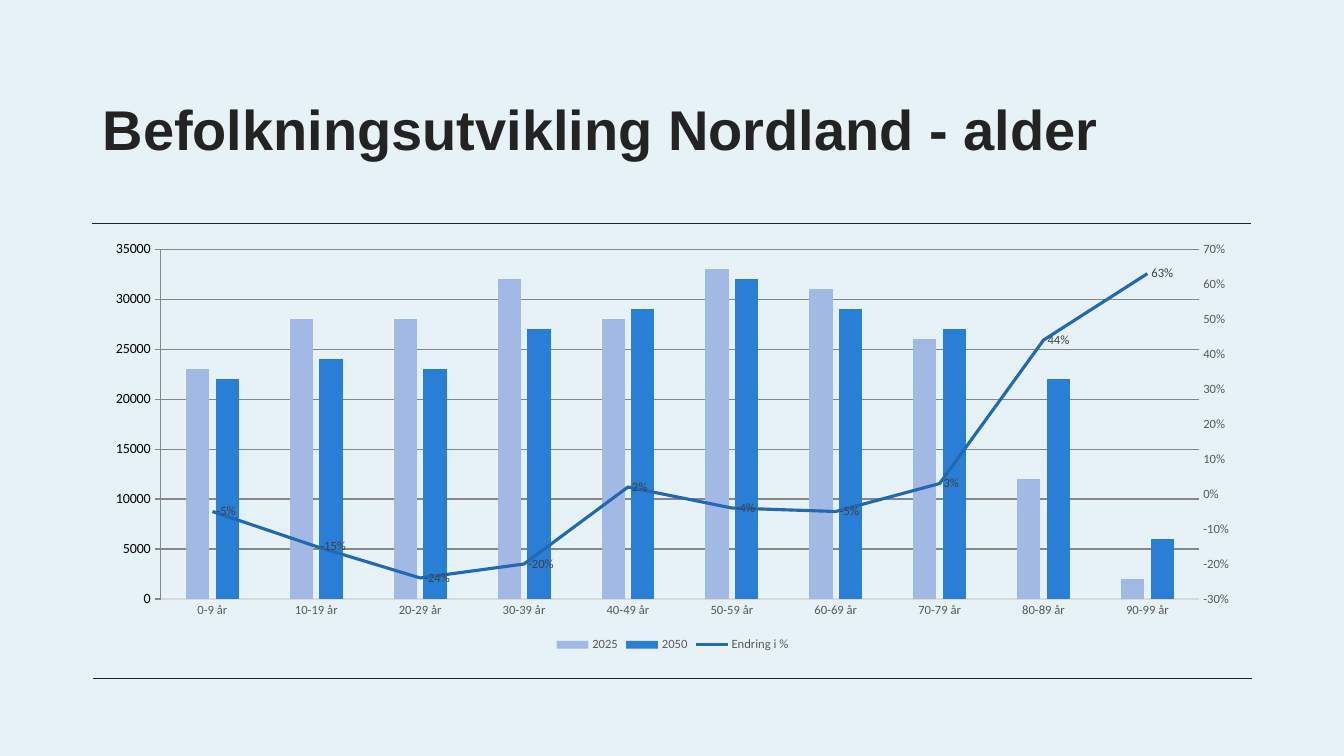
from dataclasses import dataclass

from pptx import Presentation
from pptx.chart.axis import ValueAxis
from pptx.chart.data import CategoryChartData
from pptx.dml.color import RGBColor
from pptx.enum.chart import XL_CHART_TYPE, XL_LABEL_POSITION, XL_LEGEND_POSITION
from pptx.enum.chart import XL_MARKER_STYLE, XL_TICK_MARK
from pptx.enum.shapes import MSO_CONNECTOR
from pptx.enum.text import MSO_ANCHOR
from pptx.oxml import parse_xml
from pptx.oxml.ns import nsdecls, qn
from pptx.util import Emu, Pt

EMU_PER_PX = 9144
INK = "242323"
GRAY = "595959"
GRID = "D9D9D9"


@dataclass(frozen=True)
class Rule:
    left: int
    top: int
    width: int


@dataclass(frozen=True)
class PopulationSeries:
    name: str
    values: tuple
    color: str
    number_format: str = "0"


RULES = (Rule(92, 673, 1150), Rule(91, 222, 1150))
AGE_GROUPS = [f"{start}-{start + 9} år" for start in range(0, 100, 10)]
POPULATIONS = (
    PopulationSeries(
        "2025",
        (23000, 28000, 28000, 32000, 28000, 33000, 31000, 26000, 12000, 2000),
        "A3B9E5",
    ),
    PopulationSeries(
        "2050",
        (22000, 24000, 23000, 27000, 29000, 32000, 29000, 27000, 22000, 6000),
        "297FD5",
    ),
)
CHANGE = PopulationSeries(
    "Endring i %",
    (-0.05, -0.15, -0.24, -0.2, 0.02, -0.04, -0.05, 0.03, 0.44, 0.63),
    "2269B1",
    "0%",
)


def px(length: int) -> Emu:
    return Emu(length * EMU_PER_PX)


def rgb(color: str) -> RGBColor:
    return RGBColor.from_string(color)


def set_font(font, name: str, size: int, color: str, bold: bool = False) -> None:
    font.name = name
    font.size = Pt(size)
    font.bold = bold
    font.color.rgb = rgb(color)


def set_line(line, color: str, width: float) -> None:
    line.color.rgb = rgb(color)
    line.width = Pt(width)


def add_rule(slide, rule: Rule) -> None:
    connector = slide.shapes.add_connector(
        MSO_CONNECTOR.STRAIGHT,
        px(rule.left), px(rule.top), px(rule.left + rule.width), px(rule.top),
    )
    set_line(connector.line, INK, 0.5)
    properties = connector._element.spPr
    properties.append(parse_xml(f"<a:effectLst {nsdecls('a')}/>"))


def add_title(slide, text: str) -> None:
    title = slide.shapes.add_textbox(px(92), px(40), px(1150), px(182))
    frame = title.text_frame
    frame.word_wrap = True
    frame.vertical_anchor = MSO_ANCHOR.MIDDLE
    paragraph = frame.paragraphs[0]
    paragraph.text = text
    paragraph.line_spacing = 0.9
    set_font(paragraph.font, "Arial", 40, INK, bold=True)


def style_axis(axis) -> None:
    axis.major_tick_mark = XL_TICK_MARK.NONE
    axis.minor_tick_mark = XL_TICK_MARK.NONE
    set_font(axis.tick_labels.font, "Calibri", 9, GRAY)


def style_value_axis(
    axis, low: float, high: float, step: float, number_format: str
) -> None:
    style_axis(axis)
    axis.minimum_scale = low
    axis.maximum_scale = high
    axis.major_unit = step
    axis.format.line.fill.background()
    axis.tick_labels.number_format = number_format
    axis.tick_labels.number_format_is_linked = False


def move_last_series_to_right_axis(chart) -> ValueAxis:
    bars = chart._chartSpace.find(".//" + qn("c:barChart"))
    series = bars.findall(qn("c:ser"))[-1]
    for bar_setting in series.findall(qn("c:invertIfNegative")):
        series.remove(bar_setting)
    lines = parse_xml(
        f'<c:lineChart {nsdecls("c")}><c:grouping val="standard"/>'
        '<c:varyColors val="0"/><c:marker val="1"/>'
        '<c:axId val="5001"/><c:axId val="5002"/></c:lineChart>'
    )
    lines.insert(2, series)
    bars.addnext(lines)
    category_axis = parse_xml(
        f'<c:catAx {nsdecls("c")}><c:axId val="5001"/>'
        '<c:scaling><c:orientation val="minMax"/></c:scaling>'
        '<c:delete val="1"/><c:axPos val="b"/>'
        '<c:crossAx val="5002"/><c:crosses val="autoZero"/></c:catAx>'
    )
    value_axis = parse_xml(
        f'<c:valAx {nsdecls("c")}><c:axId val="5002"/>'
        '<c:scaling><c:orientation val="minMax"/></c:scaling>'
        '<c:delete val="0"/><c:axPos val="r"/><c:tickLblPos val="nextTo"/>'
        '<c:crossAx val="5001"/><c:crosses val="max"/>'
        '<c:crossBetween val="between"/></c:valAx>'
    )
    primary_axis = chart._chartSpace.find(".//" + qn("c:valAx"))
    primary_axis.addnext(value_axis)
    value_axis.addnext(category_axis)
    return ValueAxis(value_axis)


def style_change_line(plot) -> None:
    series = plot.series[0]
    series.smooth = False
    series.marker.style = XL_MARKER_STYLE.NONE
    set_line(series.format.line, CHANGE.color, 2.25)
    labels = series.data_labels
    labels.show_value = True
    labels.number_format = CHANGE.number_format
    labels.number_format_is_linked = False
    labels.position = XL_LABEL_POSITION.RIGHT
    set_font(labels.font, "Calibri", 9, "404040")


def add_population_chart(slide) -> None:
    data = CategoryChartData()
    data.categories = AGE_GROUPS
    for series in (*POPULATIONS, CHANGE):
        data.add_series(series.name, series.values, series.number_format)
    chart = slide.shapes.add_chart(
        XL_CHART_TYPE.COLUMN_CLUSTERED, px(92), px(231), px(1150), px(420), data
    ).chart
    set_font(chart.font, "Calibri", 10, "000000")
    chart.has_title = False
    chart.has_legend = True
    chart.legend.position = XL_LEGEND_POSITION.BOTTOM
    chart.legend.include_in_layout = False
    set_font(chart.legend.font, "Calibri", 9, GRAY)

    right_axis = move_last_series_to_right_axis(chart)
    bar_plot, line_plot = chart.plots
    bar_plot.gap_width = 219
    bar_plot.overlap = -27
    bar_plot.vary_by_categories = False
    for series, population in zip(bar_plot.series, POPULATIONS):
        series.format.fill.solid()
        series.format.fill.fore_color.rgb = rgb(population.color)
    style_change_line(line_plot)

    style_axis(chart.category_axis)
    set_line(chart.category_axis.format.line, GRID, 0.75)
    style_value_axis(chart.value_axis, 0, 40000, 5000, "0")
    set_line(chart.value_axis.major_gridlines.format.line, GRID, 0.75)
    style_value_axis(right_axis, -0.3, 0.7, 0.1, "0%")


def main() -> None:
    presentation = Presentation()
    presentation.slide_width = px(1333)
    presentation.slide_height = px(750)
    slide = presentation.slides.add_slide(presentation.slide_layouts[6])
    slide.background.fill.solid()
    slide.background.fill.fore_color.rgb = rgb("E6F2F6")
    for rule in RULES:
        add_rule(slide, rule)
    add_title(slide, "Befolkningsutvikling Nordland - alder")
    add_population_chart(slide)
    presentation.save("out.pptx")


if __name__ == "__main__":
    main()
